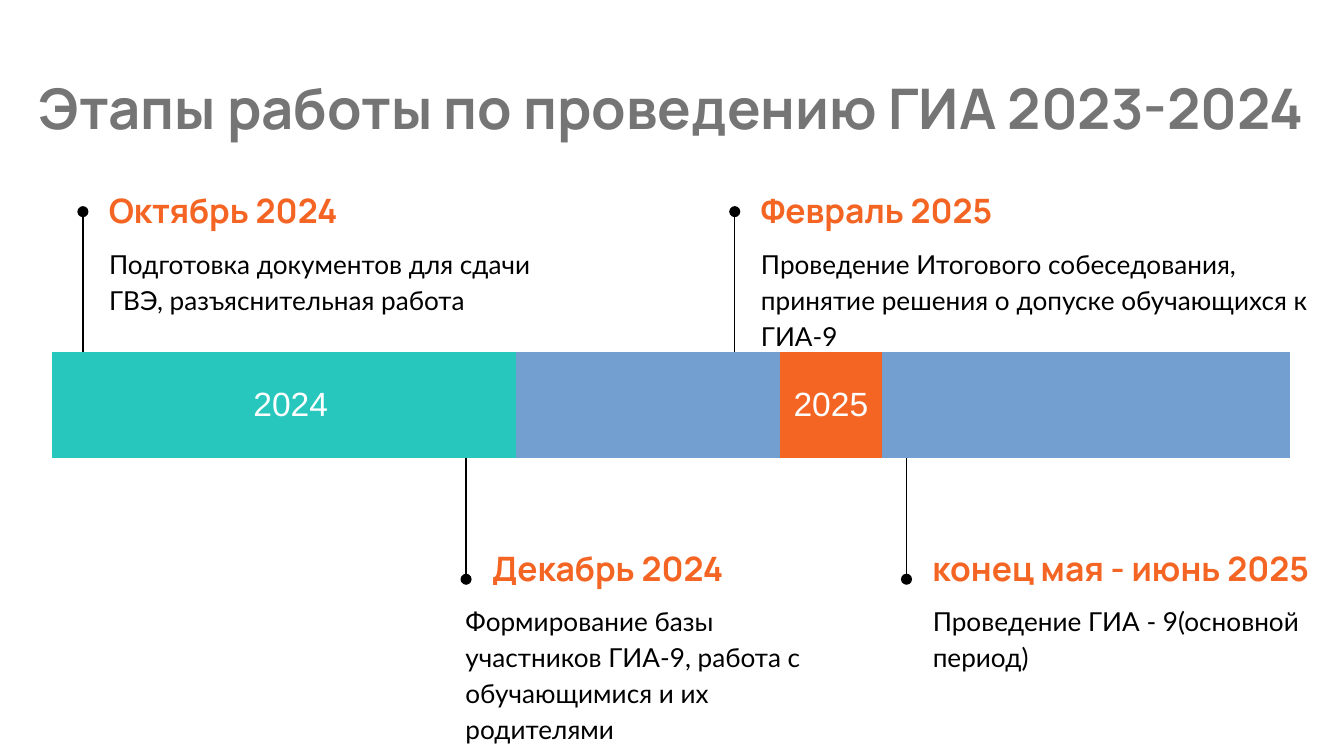
"""Build a timeline slide of the exam preparation stages."""
from dataclasses import dataclass

from pptx import Presentation
from pptx.dml.color import RGBColor
from pptx.enum.shapes import MSO_CONNECTOR as Connector
from pptx.enum.text import MSO_ANCHOR as Anchor, MSO_AUTO_SIZE as AutoSize, PP_ALIGN as Align
from pptx.oxml.ns import qn
from pptx.util import Inches, Pt
from lxml.etree import SubElement

COLORS = {
    "title": "757575",
    "accent": "F46524",
    "teal": "27C7BD",
    "text": "000000",
    "white": "FFFFFF",
}
SLIDE_WIDTH = Inches(10)
SLIDE_HEIGHT = SLIDE_WIDTH * 9 // 16
GRID_COLUMNS = 100
PLAIN_TABLE = "{2D5ABB26-0587-4C30-8999-92F81FD0307C}"
BAR_LEFT, BAR_TOP, BAR_HEIGHT = 3.9, 26.2, 7.9
BAR_COLUMNS = [7.59] * 3 + [11.7, 4.5] + [7.59] * 7
HEADING_GAP = 0.95


@dataclass(frozen=True)
class Style:
    font: str
    size: float
    color: str
    bold: bool = False


@dataclass(frozen=True)
class Year:
    text: str
    first: int
    last: int
    color: str
    right_inset: float


@dataclass(frozen=True)
class Level:
    stem_start: float
    dot: float
    heading: float
    body: float


@dataclass(frozen=True)
class Stage:
    heading: str
    body: str
    stem: float
    level: Level
    heading_width: float
    body_width: float
    body_shift: float = 0


TITLE = Style("Manrope", 30, "title", True)
HEADING = Style("Manrope", 18, "accent", True)
BODY = Style("Lato", 14, "text")
YEAR = Style("Arial", 18, "white")

YEARS = [Year("2024", 0, 3, "teal", 0), Year("2025", 4, 11, "accent", 1)]

UPPER = Level(BAR_TOP, 15.75, 13.5, 17.1)
LOWER = Level(BAR_TOP + BAR_HEIGHT, 43.1, 40.15, 43.7)

STAGES = [
    Stage("Октябрь 2024", "Подготовка документов для сдачи ГВЭ, разъяснительная работа",
          6.17, UPPER, 25.3, 33.6),
    Stage("Декабрь 2024",
          "Формирование базы участников ГИА-9, работа с обучающимися и их родителями",
          34.68, LOWER, 25.3, 30, -2),
    Stage("Февраль 2025",
          "Проведение Итогового собеседования, принятие решения о допуске обучающихся к ГИА-9",
          54.67, UPPER, 25.7, 44.3),
    Stage("конец мая - июнь 2025", "Проведение ГИА - 9(основной период)",
          67.45, LOWER, 32.4, 30),
]


def grid(units: float) -> int:
    """Turn grid units into a length."""
    return round(units * SLIDE_WIDTH / GRID_COLUMNS)


def place(shape, left: float, top: float, width: float, height: float) -> None:
    """Move a shape to a place on the grid."""
    shape.left, shape.top = grid(left), grid(top)
    shape.width, shape.height = grid(width), grid(height)


def write(frame, text: str, style: Style, align=Align.LEFT):
    """Write one styled span and return its paragraph."""
    para = frame.paragraphs[0]
    para.alignment = align
    span = para.add_run()
    span.text = text
    span.font.name, span.font.size, span.font.bold = style.font, Pt(style.size), style.bold
    span.font.color.rgb = RGBColor.from_string(COLORS[style.color])
    return para


def fill_box(box, text: str, style: Style, anchor=Anchor.TOP):
    """Set up a box with even insets and write its text."""
    frame = box.text_frame
    frame.word_wrap, frame.auto_size = True, AutoSize.NONE
    frame.vertical_anchor = anchor
    frame.margin_left = frame.margin_right = frame.margin_top = frame.margin_bottom = grid(1)
    return write(frame, text, style)


def draw_bar(page) -> None:
    """Draw the year bar as a one-row table with a merged cell per year."""
    frame = page.shapes.add_table(1, len(BAR_COLUMNS), grid(BAR_LEFT), grid(BAR_TOP),
                                  grid(sum(BAR_COLUMNS)), grid(BAR_HEIGHT))
    table = frame.table
    table._tbl.tblPr.find(qn("a:tableStyleId")).text = PLAIN_TABLE
    for column, width in zip(table.columns, BAR_COLUMNS):
        column.width = grid(width)
    for year in YEARS:
        cell = table.cell(0, year.first)
        cell.merge(table.cell(0, year.last))
        cell.fill.solid()
        cell.fill.fore_color.rgb = RGBColor.from_string(COLORS[year.color])
        cell.vertical_anchor = Anchor.MIDDLE
        cell.margin_left = cell.margin_top = cell.margin_bottom = grid(1)
        cell.margin_right = grid(year.right_inset)
        write(cell.text_frame, year.text, YEAR, Align.CENTER)


def draw_stem(page, stage: Stage) -> None:
    """Draw a line from the bar to a dot beside the heading."""
    x = grid(stage.stem)
    stem = page.shapes.add_connector(Connector.STRAIGHT, x, grid(stage.level.stem_start),
                                     x, grid(stage.level.dot))
    stem.line.color.rgb = RGBColor.from_string(COLORS["text"])
    stem.line.width = Pt(0.75)
    SubElement(stem.line._get_or_add_ln(), qn("a:tailEnd"), type="oval")
    SubElement(stem._element.spPr, qn("a:effectLst"))


def draw_stage(page, stage: Stage, body) -> None:
    """Draw the stem, heading and description of a stage."""
    draw_stem(page, stage)
    left = stage.stem + HEADING_GAP
    heading = page.shapes.add_textbox(0, 0, 0, 0)
    place(heading, left, stage.level.heading, stage.heading_width, 4.3)
    fill_box(heading, stage.heading, HEADING, Anchor.MIDDLE)
    place(body, left + stage.body_shift, stage.level.body, stage.body_width, 6.3)
    para = fill_box(body, stage.body, BODY)
    para.line_spacing, para.space_before, para.space_after = 1.15, Pt(0), Pt(16)
    properties = para._p.get_or_add_pPr()
    properties.set("marL", "0")
    properties.set("indent", "0")
    SubElement(properties, qn("a:buNone"))


def main() -> None:
    """Build and save the deck."""
    deck = Presentation()
    deck.slide_width, deck.slide_height = SLIDE_WIDTH, SLIDE_HEIGHT
    page = deck.slides.add_slide(deck.slide_layouts.get_by_name("Comparison"))
    title, *bodies = page.placeholders
    place(title, 1.9, 4.5, 96.4, 7)
    fill_box(title, "Этапы работы по проведению ГИА 2023-2024", TITLE)
    draw_bar(page)
    for stage, body in zip(STAGES, bodies):
        draw_stage(page, stage, body)
    deck.save("out.pptx")


if __name__ == "__main__":
    main()
